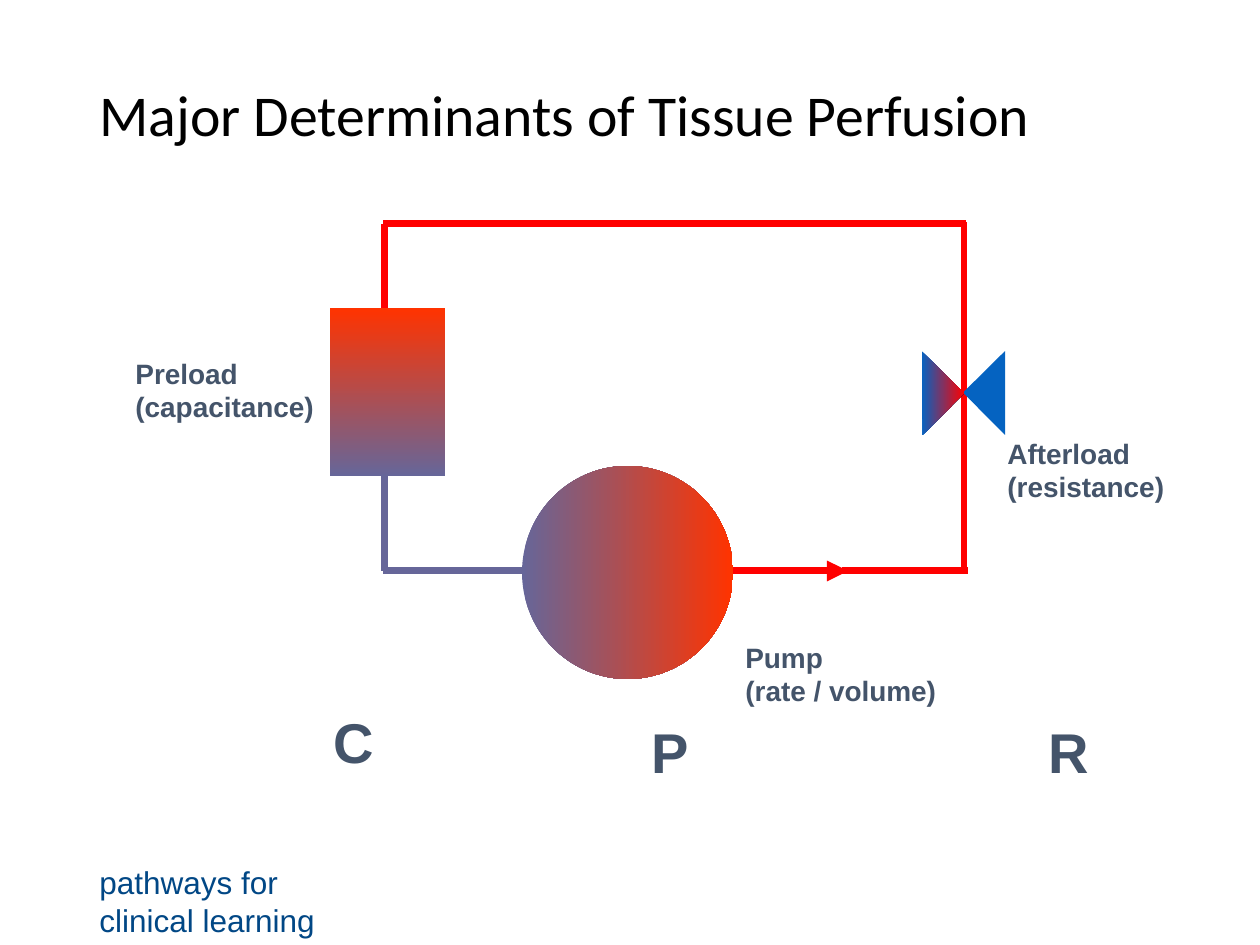
from pptx import Presentation
from pptx import util as u
from pptx.dml.color import RGBColor
from pptx.enum import shapes, text
from pptx.oxml.ns import qn
from lxml import etree

RED = RGBColor(0xFF, 0x00, 0x00)
ORANGE = RGBColor(0xFF, 0x33, 0x00)
VENOUS = RGBColor(0x66, 0x66, 0x99)
BLUE = RGBColor(0x05, 0x63, 0xC1)
SLATE = RGBColor(0x44, 0x54, 0x6A)
NAVY = RGBColor(0x01, 0x47, 0x85)
BLACK = RGBColor(0x00, 0x00, 0x00)
EMU_PER_PX = 914400 / 126


def px(length):
    return u.Emu(round(length * EMU_PER_PX))


class Diagram:
    font = "Arial"
    title_font = "Calibri"
    line_width = u.Pt(4)

    def __init__(self, deck):
        self.page = deck.slides.add_slide(deck.slide_layouts[5])

    def add_words(self, box, lines, size, color, font, bold=False):
        para = box.text_frame.paragraphs[0]
        para.alignment = text.PP_ALIGN.LEFT
        for index, line in enumerate(lines):
            if index:
                para.add_line_break()
            span = para.add_run()
            span.text = line
            span.font.name = font
            span.font.size = u.Pt(size)
            span.font.bold = bold
            span.font.color.rgb = color
        return para

    def title(self, words, left, top, width, height):
        box = self.page.shapes.title
        box.left, box.top, box.width, box.height = map(px, (left, top, width, height))
        box.text_frame.auto_size = text.MSO_AUTO_SIZE.NONE
        box.text_frame.vertical_anchor = text.MSO_ANCHOR.MIDDLE
        self.add_words(box, [words], 33, BLACK, self.title_font).line_spacing = 0.9

    def textbox(self, left, top, width, height):
        box = self.page.shapes.add_textbox(*map(px, (left, top, width, height)))
        box.text_frame.word_wrap = True
        return box

    def label(self, lines, size, left, top, width, height):
        box = self.textbox(left, top, width, height)
        box.text_frame.auto_size = text.MSO_AUTO_SIZE.SHAPE_TO_FIT_TEXT
        self.add_words(box, lines, size, SLATE, self.font, bold=True)

    def footer(self, words, left, top, width, height):
        box = self.textbox(left, top, width, height)
        box.text_frame.vertical_anchor = text.MSO_ANCHOR.MIDDLE
        self.add_words(box, [words], 18, NAVY, self.font)

    def pipe(self, color, start, end, arrow=False):
        line = self.page.shapes.add_connector(
            shapes.MSO_CONNECTOR.STRAIGHT, *map(px, start + end))
        line.line.color.rgb = color
        line.line.width = self.line_width
        properties = line._element.spPr
        if arrow:
            etree.SubElement(properties.find(qn("a:ln")), qn("a:tailEnd"), type="triangle")
        etree.SubElement(properties, qn("a:effectLst"))

    def shape(self, kind, left, top, width, height, colors, angle=0, rotation=0):
        item = self.page.shapes.add_shape(kind, *map(px, (left, top, width, height)))
        item.shadow.inherit = False
        item.line.fill.background()
        item.rotation = rotation
        if len(colors) == 1:
            item.fill.solid()
            item.fill.fore_color.rgb = colors[0]
        else:
            item.fill.gradient()
            item.fill.gradient_angle = -angle % 360
            for stop, color in zip(item.fill.gradient_stops, colors):
                stop.color.rgb = color
            item._element.spPr.find(qn("a:gradFill")).set("rotWithShape", "0")
        return item

    def valve_half(self, left, colors, rotation):
        half = self.shape(shapes.MSO_SHAPE.ISOSCELES_TRIANGLE,
                          left, 372, 84, 42, colors, rotation=rotation)
        half.adjustments[0] = 0.505


def main():
    deck = Presentation()
    deck.slide_width, deck.slide_height = px(1260), px(945)
    diagram = Diagram(deck)
    diagram.title("Major Determinants of Tissue Perfusion", 87, 53, 1235, 129)
    diagram.footer("pathways for clinical learning", 87, 876, 284, 50)

    diagram.pipe(RED, (966, 224), (383, 224))
    diagram.pipe(RED, (385, 224), (385, 309))
    diagram.shape(shapes.MSO_SHAPE.RECTANGLE, 330, 308, 115, 168, (ORANGE, VENOUS), angle=90)
    diagram.pipe(RED, (733, 571), (848, 571), arrow=True)
    diagram.pipe(RED, (842, 571), (968, 571))
    diagram.pipe(RED, (964, 568), (964, 222))
    diagram.valve_half(942, (BLUE,), 270)
    diagram.valve_half(901, (BLUE, RED), 89.4)
    diagram.pipe(VENOUS, (529, 571), (383, 571))
    diagram.pipe(VENOUS, (385, 571), (385, 476))
    diagram.shape(shapes.MSO_SHAPE.OVAL, 522, 466, 211, 213, (VENOUS, ORANGE))

    for lines, left, top, width in (
        (("Preload", "(capacitance)"), 123, 350, 210),
        (("Pump", "(rate / volume)"), 733, 634, 231),
        (("Afterload", "(resistance)"), 995, 430, 231),
    ):
        diagram.label(lines, 16, left, top, width, 81)
    for letter, left, top in (("C", 321, 701), ("P", 639, 711), ("R", 1036, 711)):
        diagram.label([letter], 32, left, top, 79, 79)

    deck.save("out.pptx")


if __name__ == "__main__":
    main()
